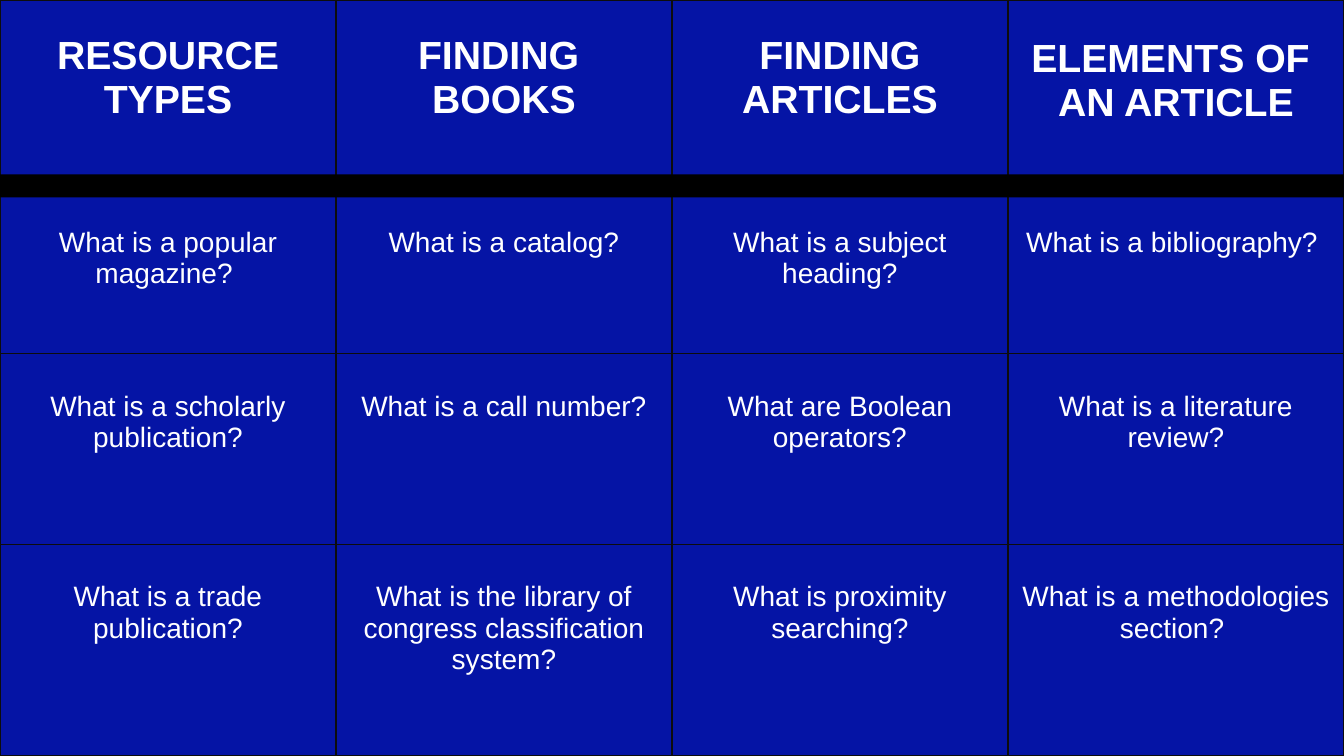
from lxml.etree import SubElement
from pptx import Presentation
from pptx.dml.color import RGBColor
from pptx.enum.shapes import MSO_SHAPE
from pptx.enum.text import PP_ALIGN
from pptx.oxml.ns import qn
from pptx.util import Inches, Pt

BLUE = RGBColor(0x05, 0x14, 0xA5)
WHITE = RGBColor(0xFF, 0xFF, 0xFF)
BLACK = RGBColor(0, 0, 0)
BORDER = RGBColor(0x0D, 0x0D, 0x0D)

SLIDE_W, SLIDE_H = 13.33, 7.5
ROW_HEIGHTS = [1.88, 1.63, 1.89, 2.1]
HEADER_TOPS = [0.34, 0.34, 0.34, 0.37]
QUESTION_TOP = 0.37

BOARD = [
    ["RESOURCE TYPES", "FINDING \nBOOKS", "FINDING ARTICLES",
     "ELEMENTS OF \nAN ARTICLE"],
    ["What is a popular magazine? ", "What is a catalog?",
     "What is a subject heading?", "What is a bibliography? "],
    ["What is a scholarly publication?", "What is a call number?",
     "What are Boolean operators?", "What is a literature review?"],
    ["What is a trade publication?",
     "What is the library of congress classification system?",
     "What is proximity searching?", "What is a methodologies section? "],
]


def add_borders(cell):
    tcPr = cell._tc.get_or_add_tcPr()
    for side in ("a:lnL", "a:lnR", "a:lnT", "a:lnB"):
        ln = SubElement(tcPr, qn(side), w=str(Pt(1)))
        fill = SubElement(ln, qn("a:solidFill"))
        SubElement(fill, qn("a:srgbClr"), val=str(BORDER))


def fill_cell(cell, text, size, bold, top):
    add_borders(cell)
    cell.fill.solid()
    cell.fill.fore_color.rgb = BLUE
    cell.margin_top = Inches(top)
    cell.text_frame.text = text
    for p in cell.text_frame.paragraphs:
        p.alignment = PP_ALIGN.CENTER
        for r in p.runs:
            r.font.name = "Arial"
            r.font.size = Pt(size)
            r.font.bold = bold
            r.font.color.rgb = WHITE


def add_board(s, left, top, width, height):
    """Category headers above a grid of questions."""
    frame = s.shapes.add_table(len(BOARD), len(BOARD[0]), Inches(left),
                               Inches(top), Inches(width), Inches(height))
    table = frame.table
    for col in table.columns:
        col.width = Inches(width / len(BOARD[0]))
    for row, share in zip(table.rows, ROW_HEIGHTS):
        row.height = Inches(height * share / sum(ROW_HEIGHTS))
    for i, texts in enumerate(BOARD):
        for j, text in enumerate(texts):
            if i == 0:
                fill_cell(table.cell(i, j), text, 28, True, HEADER_TOPS[j])
            else:
                fill_cell(table.cell(i, j), text, 20, False, QUESTION_TOP)


def add_divider(s, left, top, width, height):
    """Black band between headers and questions."""
    sp = s.shapes.add_shape(MSO_SHAPE.RECTANGLE, Inches(left), Inches(top),
                            Inches(width), Inches(height))
    sp.shadow.inherit = False
    sp.fill.solid()
    sp.fill.fore_color.rgb = BLACK
    sp.line.fill.background()


def main():
    prs = Presentation()
    prs.slide_width, prs.slide_height = Inches(SLIDE_W), Inches(SLIDE_H)
    s = prs.slides.add_slide(prs.slide_layouts[6])
    add_board(s, 0, 0, SLIDE_W, SLIDE_H)
    add_divider(s, 0, 1.73, SLIDE_W, 0.23)
    prs.save("out.pptx")


if __name__ == "__main__":
    main()
